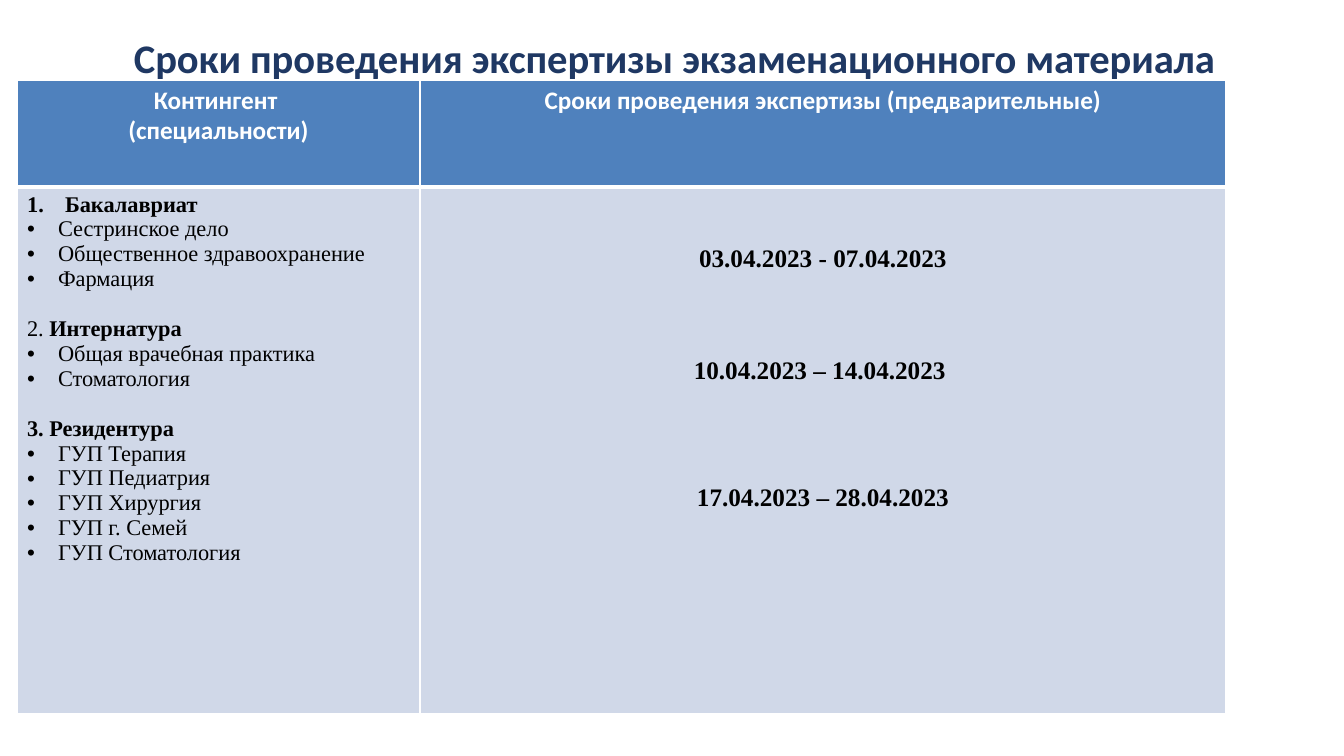
from lxml import etree
from pptx import Presentation
from pptx.dml.color import RGBColor
from pptx.enum.text import MSO_ANCHOR, MSO_AUTO_SIZE, PP_ALIGN
from pptx.oxml.ns import qn
from pptx.util import Emu, Pt

CENTER, LEFT = PP_ALIGN.CENTER, PP_ALIGN.LEFT
TOP = MSO_ANCHOR.TOP
NO_FIT = MSO_AUTO_SIZE.NONE
PX = 914400 / 100.8

THEME = {
    "heading_font": "Calibri", "body_font": "Times New Roman",
    "navy": "1F3863", "blue": "4F81BD", "pale": "D0D8E8",
    "white": "FFFFFF", "black": "000000",
    "title_size": 29, "head_size": 18, "list_size": 16, "date_size": 18,
}


def px(value):
    return Emu(round(value * PX))


def add_span(para, text, font, size, color, bold=True):
    span = para.add_run()
    span.text = text
    span.font.name = THEME[font]
    span.font.size = Pt(THEME[size])
    span.font.bold = bold
    span.font.color.rgb = RGBColor.from_string(THEME[color])
    return span


deck = Presentation()
deck.slide_width, deck.slide_height = px(1344), px(756)
page = deck.slides.add_slide(deck.slide_layouts[5])

title = page.shapes.title
title.left, title.top, title.width, title.height = px(57), px(31), px(1261), px(51)
frame = title.text_frame
frame.auto_size = NO_FIT
frame.word_wrap = True
frame.vertical_anchor = TOP
frame.margin_left, frame.margin_top = 0, px(2)
frame.margin_right, frame.margin_bottom = px(26), 0
para = frame.paragraphs[0]
para.alignment = CENTER
span = add_span(para, "Сроки проведения экспертизы экзаменационного материала",
                "heading_font", "title_size", "navy")
span.font._element.set("spc", "-10")

column_widths, row_heights = [403, 806], [107, 527]
table = page.shapes.add_table(2, 2, px(17), px(80), px(sum(column_widths)),
                              px(sum(row_heights))).table
table.horz_banding = False
for column, width in zip(table.columns, column_widths):
    column.width = px(width)
for row, height, fill, bottom in zip(table.rows, row_heights, ["blue", "pale"], [3, 1]):
    row.height = px(height)
    for cell in row.cells:
        cell.fill.solid()
        cell.fill.fore_color.rgb = RGBColor.from_string(THEME[fill])
        properties = cell._tc.get_or_add_tcPr()
        for place, (side, weight) in enumerate([("L", 1), ("R", 1), ("T", 1), ("B", bottom)]):
            line = etree.Element(qn("a:ln" + side), w=str(Pt(weight)))
            solid = etree.SubElement(line, qn("a:solidFill"))
            etree.SubElement(solid, qn("a:srgbClr"), val=THEME["white"])
            properties.insert(place, line)

headings = [["Контингент ", "(специальности)"],
            ["Сроки проведения экспертизы (предварительные)"]]
for column, lines in enumerate(headings):
    frame = table.cell(0, column).text_frame
    for number, text in enumerate(lines):
        para = frame.add_paragraph() if number else frame.paragraphs[0]
        para.alignment = CENTER
        add_span(para, text, "heading_font", "head_size", "white")

groups = [
    ("", "Бакалавриат", ["Сестринское дело", "Общественное здравоохранение", "Фармация"]),
    ("2. ", "Интернатура", ["Общая врачебная практика", "Стоматология"]),
    ("", "3. Резидентура", ["ГУП Терапия", "ГУП Педиатрия", "ГУП Хирургия",
                            "ГУП г. Семей", "ГУП Стоматология"]),
]
frame = table.cell(1, 0).text_frame
for group, (prefix, heading, specialties) in enumerate(groups):
    for item, text in enumerate([heading] + specialties):
        para = frame.add_paragraph() if group or item else frame.paragraphs[0]
        para.alignment = LEFT
        layout = para._p.get_or_add_pPr()
        if item or not group:
            indent = px(31 if item else 38)
            layout.set("marL", str(indent))
            layout.set("indent", str(-indent))
        if item:
            etree.SubElement(layout, qn("a:buFont"), typeface="Arial")
            etree.SubElement(layout, qn("a:buChar"), char="•")
        elif not group:
            etree.SubElement(layout, qn("a:buFont"), typeface="+mj-lt")
            etree.SubElement(layout, qn("a:buAutoNum"), type="arabicPeriod")
        else:
            para.space_before = px(25)
        if prefix and not item:
            add_span(para, prefix, "body_font", "list_size", "black", False)
        add_span(para, text, "body_font", "list_size", "black", not item)

dates = [("03.04.2023 - 07.04.2023", 0), ("10.04.2023 – 14.04.2023 ", 84),
         ("17.04.2023 – 28.04.2023", 99)]
date_cell = table.cell(1, 1)
date_cell.margin_top = px(58)
for number, (text, gap) in enumerate(dates):
    frame = date_cell.text_frame
    para = frame.add_paragraph() if number else frame.paragraphs[0]
    para.alignment = CENTER
    if gap:
        para.space_before = px(gap)
    add_span(para, text, "body_font", "date_size", "black")

deck.save("out.pptx")
